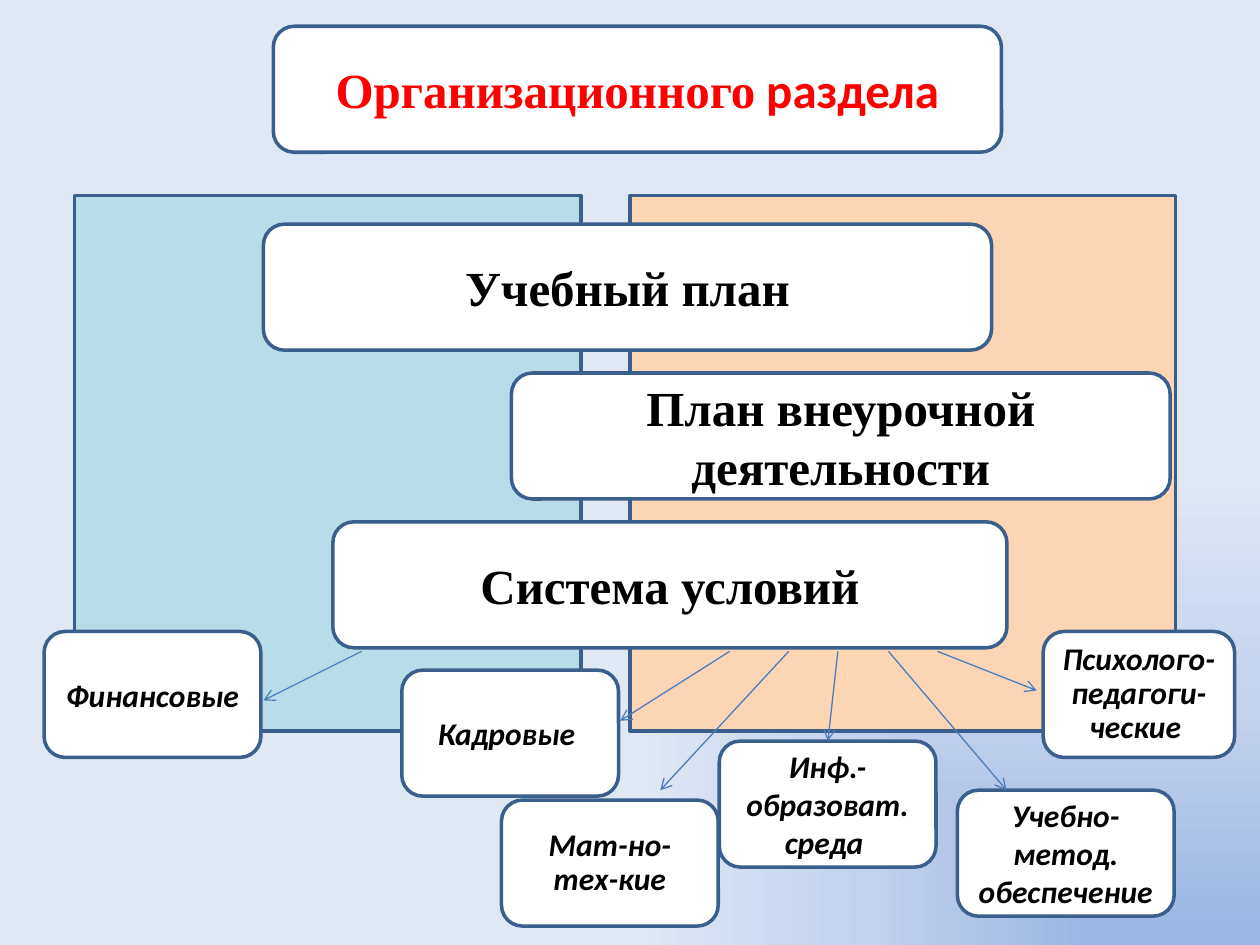
from lxml.etree import SubElement
from pptx import Presentation
from pptx.dml.color import RGBColor
from pptx.enum.shapes import MSO_CONNECTOR as Connector, MSO_SHAPE as Shape
from pptx.enum.text import MSO_ANCHOR as Anchor, PP_ALIGN as Align
from pptx.oxml import parse_xml
from pptx.oxml.ns import nsdecls, qn
from pptx.util import Cm, Pt

WHITE = RGBColor(0xFF, 0xFF, 0xFF)
BLACK = RGBColor(0x00, 0x00, 0x00)
RED = RGBColor(0xFF, 0x00, 0x00)
PEACH = RGBColor(0xFC, 0xD5, 0xB5)
AQUA = RGBColor(0xB7, 0xDE, 0xE8)
OUTLINE = RGBColor(0x3A, 0x5F, 0x8C)
ARROW = RGBColor(0x4B, 0x7E, 0xBC)
GLOW = (
    (0, RGBColor(0x9A, 0xB5, 0xE4)),
    (50, RGBColor(0xC2, 0xD1, 0xED)),
    (100, RGBColor(0xE1, 0xE8, 0xF5)),
)
SERIF = "Times New Roman"
SANS = "Calibri"
BOX_HEIGHT = 2.54
CONDITION_WIDTH = 4.37
ARROW_TOP = 13.13

PANELS = ((12.7, 11, PEACH), (1.5, 10.21, AQUA))
SECTIONS = (
    ("Учебный план", 5.31, 14.68),
    ("План внеурочной деятельности", 10.31, 13.28),
    ("Система условий", 6.71, 13.59),
)
CONDITIONS = (
    ("Кадровые ", 8.1, 13.51, CONDITION_WIDTH, 1),
    ("Финансовые ", 0.89, 12.73, CONDITION_WIDTH, 1),
    ("Мат-но-тех-кие", 10.11, 16.13, CONDITION_WIDTH, 0.9),
    ("Инф.-образоват. среда ", 14.5, 14.94, CONDITION_WIDTH, 1),
    ("Учебно-метод. обеспечение ", 19.3, 15.93, CONDITION_WIDTH, 1),
    ("Психолого-педагоги-ческие ", 21.03, 12.73, 3.86, 0.9),
)
ARROWS = (
    (7.29, 5.31, 14.12),
    (14.71, 12.5, 14.53),
    (15.9, 13.31, 15.93),
    (16.89, 16.69, 14.94),
    (17.91, 20.29, 15.93),
    (18.9, 20.9, 13.92),
)


def paint_background(slide):
    """Fill the background with a gradient centred on the bottom right corner."""
    slide.background.fill.solid()
    solid = slide.element.find(".//" + qn("p:bgPr")).find(qn("a:solidFill"))
    stops = "".join(
        f'<a:gs pos="{position * 1000}"><a:srgbClr val="{color}"/></a:gs>'
        for position, color in GLOW
    )
    gradient = parse_xml(
        f'<a:gradFill {nsdecls("a")} rotWithShape="1"><a:gsLst>{stops}</a:gsLst>'
        '<a:path path="rect"><a:fillToRect l="100000" t="100000"/></a:path>'
        "</a:gradFill>"
    )
    solid.getparent().replace(solid, gradient)


def add_block(slide, kind, left, top, width, height, color):
    """Add an outlined, filled shape and return it."""
    shape = slide.shapes.add_shape(kind, Cm(left), Cm(top), Cm(width), Cm(height))
    shape.shadow.inherit = False
    shape.fill.solid()
    shape.fill.fore_color.rgb = color
    shape.line.color.rgb = OUTLINE
    shape.line.width = Pt(2)
    return shape


def add_text(paragraph, text, *, font=SERIF, size=28, color=BLACK, italic=False):
    """Append a bold run to a paragraph."""
    run = paragraph.add_run()
    run.text = text
    run.font.name = font
    run.font.size = Pt(size)
    run.font.bold = True
    run.font.italic = italic
    run.font.color.rgb = color


def add_box(slide, left, top, width, spacing=1):
    """Add a white rounded box and return its centred paragraph."""
    shape = add_block(
        slide, Shape.ROUNDED_RECTANGLE, left, top, width, BOX_HEIGHT, WHITE
    )
    shape.text_frame.word_wrap = True
    shape.text_frame.vertical_anchor = Anchor.MIDDLE
    paragraph = shape.text_frame.paragraphs[0]
    paragraph.alignment = Align.CENTER
    paragraph.line_spacing = float(spacing)
    return paragraph


def add_arrow(slide, start_x, end_x, end_y):
    """Add a thin arrow running down from the system of conditions."""
    connector = slide.shapes.add_connector(
        Connector.STRAIGHT, Cm(start_x), Cm(ARROW_TOP), Cm(end_x), Cm(end_y)
    )
    connector.line.color.rgb = ARROW
    connector.line.width = Pt(0.75)
    SubElement(connector.line._get_or_add_ln(), qn("a:tailEnd"), type="arrow")
    SubElement(connector.element.spPr, qn("a:effectLst"))


def main():
    """Build the slide and save it."""
    presentation = Presentation()
    presentation.slide_width = Cm(25.4)
    presentation.slide_height = Cm(19.05)
    slide = presentation.slides.add_slide(presentation.slide_layouts[6])
    paint_background(slide)

    for left, width, color in PANELS:
        add_block(slide, Shape.RECTANGLE, left, 3.94, width, 10.8, color)

    heading = add_box(slide, 5.51, 0.53, 14.68)
    add_text(heading, "Организационного", color=RED)
    add_text(heading, " раздела", font=SANS, color=RED)

    for index, (text, left, width) in enumerate(SECTIONS):
        add_text(add_box(slide, left, 4.52 + 3 * index, width), text)

    for text, left, top, width, spacing in CONDITIONS:
        paragraph = add_box(slide, left, top, width, spacing)
        add_text(paragraph, text, font=SANS, size=18, italic=True)

    for arrow in ARROWS:
        add_arrow(slide, *arrow)

    presentation.save("out.pptx")


if __name__ == "__main__":
    main()
